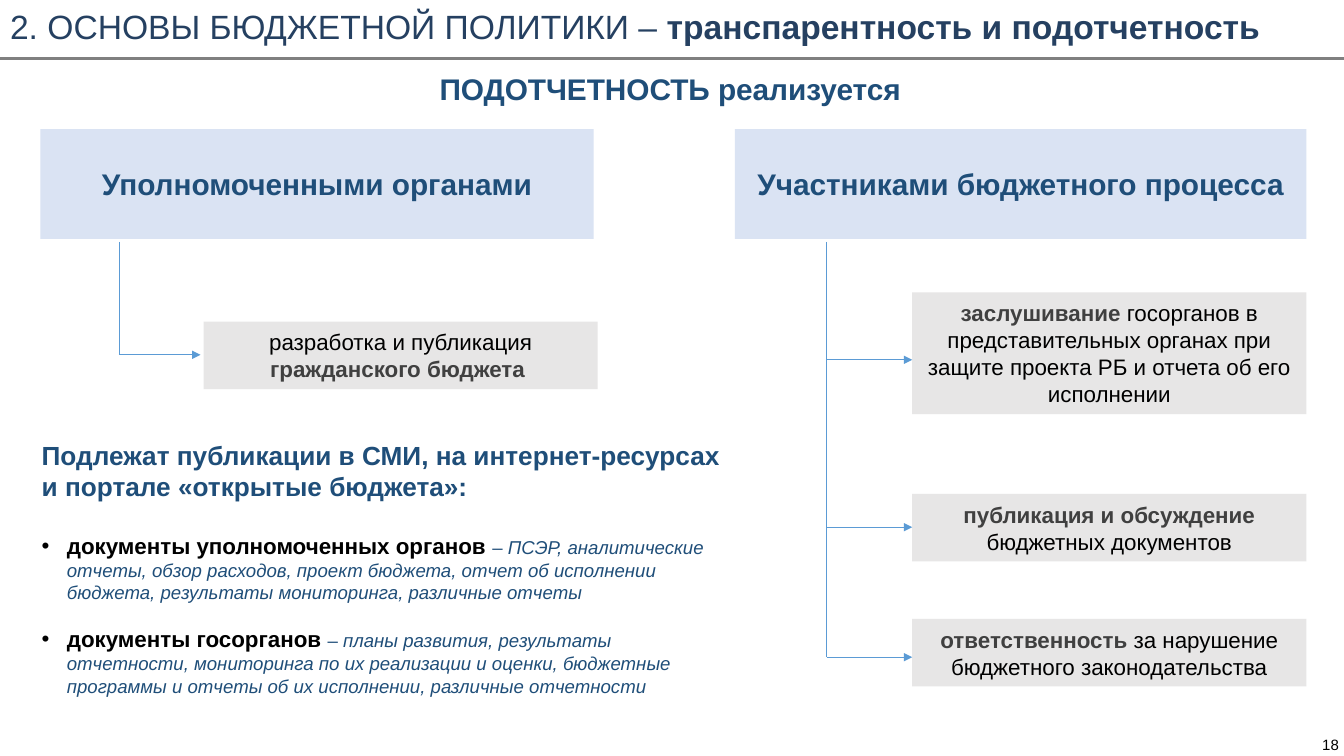
import dataclasses
from typing import Optional

import lxml.etree
import pptx
import pptx.dml.color
import pptx.enum.shapes
import pptx.enum.text
import pptx.oxml.ns
import pptx.util

RGBColor = pptx.dml.color.RGBColor
ALIGN = pptx.enum.text.PP_ALIGN
ANCHOR = pptx.enum.text.MSO_ANCHOR

NAVY = RGBColor(0x25, 0x40, 0x61)
BLUE = RGBColor(0x1F, 0x4E, 0x79)
ARROW_BLUE = RGBColor(0x5B, 0x9B, 0xD5)
PALE_BLUE = RGBColor(0xDA, 0xE3, 0xF3)
PALE_GRAY = RGBColor(0xE7, 0xE6, 0xE6)
RULE_GRAY = RGBColor(0x80, 0x80, 0x80)
DARK_GRAY = RGBColor(0x40, 0x40, 0x40)
BLACK = RGBColor(0, 0, 0)

FONT = "Arial"
COLUMNS, ROWS = 160, 90
PAGE_WIDTH, PAGE_HEIGHT = pptx.util.Emu(12192000), pptx.util.Emu(6858000)
WIDE_INSET, NORMAL_INSET = (1.6, 0.8), (1.2, 0.6)
TRUNK_TOP = 28.8


@dataclasses.dataclass(frozen=True)
class Area:
    column: float
    row: float
    columns: float
    rows: float


@dataclasses.dataclass(frozen=True)
class Span:
    text: str
    size: float = 16
    color: RGBColor = BLACK
    bold: bool = False
    italic: bool = False


@dataclasses.dataclass(frozen=True)
class Panel:
    area: Area
    spans: tuple[Span, ...]
    fill: Optional[RGBColor] = PALE_GRAY
    inset: tuple[float, float] = WIDE_INSET


@dataclasses.dataclass(frozen=True)
class Tree:
    trunk: float
    tip: float
    branches: tuple[float, ...]


def strong(text: str) -> Span:
    return Span(text, color=DARK_GRAY, bold=True)


def heading(text: str) -> tuple[Span, ...]:
    return (Span(text, 21.3, BLUE, bold=True),)


def publication(subject: str, details: str) -> tuple[Span, ...]:
    return (
        Span(subject + " ", bold=True),
        Span("– ", 13.3, BLUE),
        Span(details, 13.3, BLUE, italic=True),
    )


PANELS = (
    Panel(Area(1.56, 7.56, 156.48, 5.88), heading("ПОДОТЧЕТНОСТЬ реализуется"), None),
    Panel(Area(4.8, 15.36, 65.88, 13.08), heading("Уполномоченными органами"),
          PALE_BLUE, NORMAL_INSET),
    Panel(Area(87.48, 15.36, 68.04, 13.08), heading("Участниками бюджетного процесса"),
          PALE_BLUE, NORMAL_INSET),
    Panel(Area(24.24, 38.28, 46.92, 8.04),
          (Span("разработка и публикация "), strong("гражданского бюджета "))),
    Panel(Area(108.6, 34.8, 46.92, 14.52),
          (strong("заслушивание"),
           Span(" госорганов в представительных органах при защите проекта РБ "
                "и отчета об его исполнении"))),
    Panel(Area(108.6, 58.8, 46.92, 8.04),
          (strong("публикация и обсуждение "), Span("бюджетных документов"))),
    Panel(Area(108.6, 73.68, 46.92, 8.04),
          (strong("ответственность "), Span("за нарушение бюджетного законодательства"))),
    Panel(Area(155.16, 87.24, 6.48, 2.88), (Span("18", 10.7),), None),
)
TREES = (
    Tree(14.16, 23.88, (42.24,)),
    Tree(98.4, 108.6, (42.84, 62.76, 78.24)),
)
TITLE = (
    Span("2. ОСНОВЫ БЮДЖЕТНОЙ ПОЛИТИКИ – ", 24, NAVY),
    Span("транспарентность и подотчетность", 24, NAVY, bold=True),
)
PUBLISHED_HEADING = (
    Span("Подлежат публикации в СМИ, на интернет-ресурсах и портале «открытые бюджета»:",
         18.7, BLUE, bold=True),
)
PUBLISHED = (
    publication("документы уполномоченных органов",
                "ПСЭР, аналитические отчеты, обзор расходов, проект бюджета, отчет об "
                "исполнении бюджета, результаты мониторинга, различные отчеты"),
    publication("документы госорганов",
                "планы развития, результаты отчетности, мониторинга по их реализации и "
                "оценки, бюджетные программы и отчеты об их исполнении, различные отчетности"),
)


def across(columns: float) -> pptx.util.Emu:
    return pptx.util.Emu(round(PAGE_WIDTH * columns / COLUMNS))


def down(rows: float) -> pptx.util.Emu:
    return pptx.util.Emu(round(PAGE_HEIGHT * rows / ROWS))


def place(box, area: Area) -> None:
    box.left, box.top = across(area.column), down(area.row)
    box.width, box.height = across(area.columns), down(area.rows)


def set_frame(frame, inset: tuple[float, float], anchor: ANCHOR) -> None:
    frame.auto_size = pptx.enum.text.MSO_AUTO_SIZE.NONE
    frame.word_wrap = True
    frame.vertical_anchor = anchor
    frame.margin_left = frame.margin_right = across(inset[0])
    frame.margin_top = frame.margin_bottom = down(inset[1])


def write(para, spans: tuple[Span, ...], *, align: ALIGN = ALIGN.LEFT,
          after: float = 0, line_spacing: float = 1.0) -> None:
    para.alignment = align
    para.space_before = pptx.util.Pt(0)
    para.space_after = pptx.util.Pt(after)
    para.line_spacing = line_spacing
    for span in spans:
        run = para.add_run()
        run.text = span.text
        run.font.name = FONT
        run.font.size = pptx.util.Pt(span.size)
        run.font.color.rgb = span.color
        run.font.bold = span.bold
        run.font.italic = span.italic


def set_bullet(para, symbol: Optional[str]) -> None:
    properties = para._p.get_or_add_pPr()
    indent = across(3) if symbol else 0
    properties.set("marL", str(indent))
    properties.set("indent", str(-indent))
    tag = "a:buChar" if symbol else "a:buNone"
    bullet = lxml.etree.SubElement(properties, pptx.oxml.ns.qn(tag))
    if symbol:
        bullet.set("char", symbol)


def add_panel(page, panel: Panel) -> None:
    if panel.fill is None:
        box = page.shapes.add_textbox(0, 0, 0, 0)
    else:
        box = page.shapes.add_shape(pptx.enum.shapes.MSO_SHAPE.RECTANGLE, 0, 0, 0, 0)
        box.shadow.inherit = False
        box.fill.solid()
        box.fill.fore_color.rgb = panel.fill
        box.line.fill.background()
    place(box, panel.area)
    set_frame(box.text_frame, panel.inset, ANCHOR.MIDDLE)
    write(box.text_frame.paragraphs[0], panel.spans, align=ALIGN.CENTER)


def add_line(page, start: tuple[float, float], end: tuple[float, float], *,
             color: RGBColor = ARROW_BLUE, width: float = 0.5, arrow: bool = False) -> None:
    line = page.shapes.add_connector(
        pptx.enum.shapes.MSO_CONNECTOR.STRAIGHT,
        across(start[0]), down(start[1]), across(end[0]), down(end[1]))
    line.line.color.rgb = color
    line.line.width = pptx.util.Pt(width)
    if arrow:
        head = lxml.etree.SubElement(line.line._get_or_add_ln(), pptx.oxml.ns.qn("a:tailEnd"))
        head.set("type", "triangle")
    lxml.etree.SubElement(line._element.spPr, pptx.oxml.ns.qn("a:effectLst"))


def add_tree(page, tree: Tree) -> None:
    add_line(page, (tree.trunk, TRUNK_TOP), (tree.trunk, tree.branches[-1]))
    for row in tree.branches:
        add_line(page, (tree.trunk, row), (tree.tip, row), arrow=True)


def main() -> None:
    deck = pptx.Presentation()
    deck.slide_width, deck.slide_height = PAGE_WIDTH, PAGE_HEIGHT
    page = deck.slides.add_slide(deck.slide_layouts[1])
    title, body = page.shapes.title, page.placeholders[1]

    place(title, Area(0, 0.6, COLUMNS, 5.52))
    set_frame(title.text_frame, NORMAL_INSET, ANCHOR.MIDDLE)
    write(title.text_frame.paragraphs[0], TITLE, line_spacing=0.9)
    add_line(page, (0, 7), (COLUMNS, 7), color=RULE_GRAY, width=2.25)

    place(body, Area(3.36, 51.48, 84, 32.88))
    set_frame(body.text_frame, WIDE_INSET, ANCHOR.TOP)
    lead = body.text_frame.paragraphs[0]
    write(lead, PUBLISHED_HEADING, after=21.5)
    set_bullet(lead, None)
    for spans in PUBLISHED:
        para = body.text_frame.add_paragraph()
        write(para, spans, after=15.5)
        set_bullet(para, "•")

    for panel in PANELS:
        add_panel(page, panel)
    for tree in TREES:
        add_tree(page, tree)
    deck.save("out.pptx")


if __name__ == "__main__":
    main()
